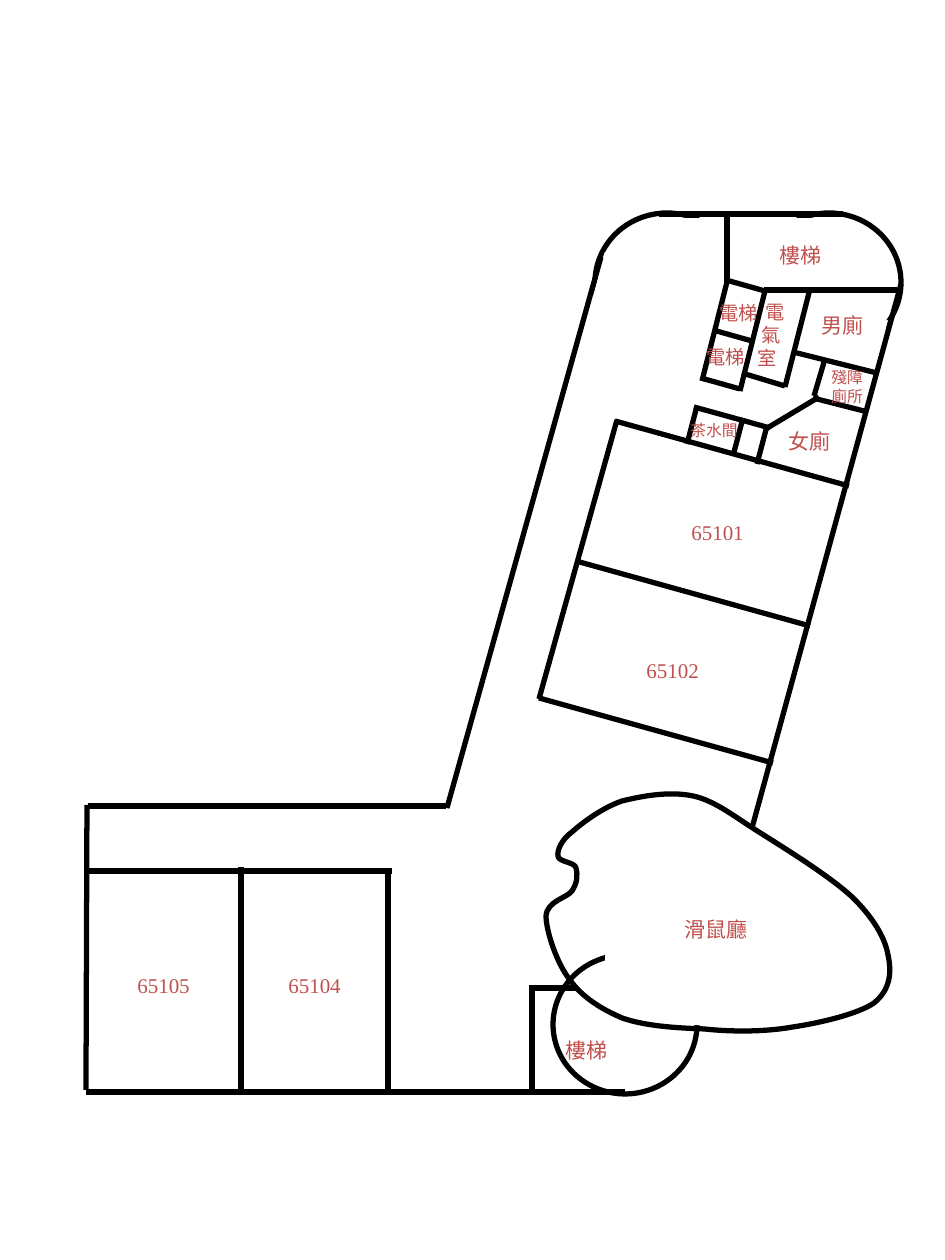
from pptx import Presentation
from pptx.dml.color import RGBColor
from pptx.enum.shapes import MSO_CONNECTOR, MSO_SHAPE
from pptx.enum.text import MSO_AUTO_SIZE
from pptx.oxml.ns import qn
from pptx.oxml.xmlchemy import OxmlElement
from pptx.util import Emu, Pt

SCALE = 914400 / 126
BLACK = RGBColor(0x00, 0x00, 0x00)
WHITE = RGBColor(0xFF, 0xFF, 0xFF)
RED = RGBColor(0xC0, 0x50, 0x4D)
CJK, LATIN = "Noto Sans CJK SC", "Times New Roman"

# Round corners, and the white patches hiding the unwanted arcs: (left, top)
CORNER_SIZE = (144, 139)
CORNERS = [(553, 955), (595, 213), (757, 213)]
# left, top, width, height, rotation
PATCHES = [(604, 936, 117, 87, 3.3), (655, 218, 169, 155, 0),
           (582, 271, 169, 155, 15), (702, 296, 169, 155, 15)]

# x1, y1, x2, y2
OUTER_WALLS = [
    (88, 806, 446, 806), (659, 214, 843, 214), (86, 1092, 625, 1092),
    (87, 805, 86, 1090), (601, 257, 447, 808), (901, 284, 752, 828),
]
INNER_WALLS = [
    (241, 867, 241, 1090), (388, 869, 388, 1094), (89, 871, 392, 871),
    (532, 985, 532, 1094), (532, 988, 576, 988), (617, 420, 539, 699),
    (694, 407, 770, 428), (764, 290, 897, 290), (765, 291, 740, 391),
    (727, 282, 702, 381), (810, 289, 785, 387), (742, 373, 785, 386),
    (793, 352, 877, 373), (825, 359, 814, 396), (764, 430, 819, 397),
    (813, 398, 864, 411), (727, 213, 727, 282),
]
# Equal parallel walls: (dx, dy) and the starting points
PARALLEL_WALLS = [
    ((234, 65), [(539, 698), (576, 561), (615, 421)]),  # classrooms
    ((-10, 38), [(697, 406), (743, 418), (767, 426)]),  # pantry
    ((39, 11), [(701, 378), (713, 330), (726, 280)]),   # lifts
]

# Mouse hall outline: start point, then two control points and an end point per curve
HALL_START = (572, 891)
HALL_CURVES = [
    ((567, 898), (547, 901), (546, 916)), ((546, 931), (557, 964), (570, 980)),
    ((582, 997), (601, 1009), (622, 1018)), ((645, 1026), (675, 1028), (704, 1029)),
    ((732, 1032), (765, 1032), (793, 1027)), ((820, 1023), (858, 1014), (874, 1003)),
    ((890, 990), (892, 973), (888, 955)), ((885, 937), (872, 916), (851, 896)),
    ((829, 876), (789, 851), (762, 834)), ((736, 818), (716, 801), (693, 796)),
    ((669, 791), (643, 796), (622, 801)), ((602, 808), (582, 823), (572, 832)),
    ((561, 840), (557, 851), (558, 856)), ((558, 862), (575, 862), (576, 868)),
    ((578, 876), (577, 883), (572, 891)),
]

# lines, (left, top, width, height), format
LABELS = [
    (["電梯"], (707, 295, 64, 37), {"size": 11}),
    (["電梯"], (694, 339, 64, 37), {"size": 11}),
    (["樓梯"], (767, 236, 68, 38), {}),
    (["男廁"], (809, 306, 68, 38), {}),
    (["女廁"], (776, 422, 68, 38), {}),
    (["茶水間"], (678, 415, 73, 31), {"size": 9}),
    (["殘障", "廁所"], (819, 362, 57, 50), {"size": 9}),
    (["電", "氣", "室"], (745, 294, 64, 83), {"size": 11, "indents": (8, 4, 0)}),
    (["樓梯"], (553, 1031, 68, 38), {}),
    (["滑鼠廳"], (672, 910, 89, 38), {}),
    (["65105"], (125, 966, 78, 38), {"font": LATIN}),
    (["65104"], (276, 966, 78, 38), {"font": LATIN}),
    (["65101"], (679, 513, 78, 38), {"font": LATIN}),
    (["65102"], (634, 651, 78, 38), {"font": LATIN}),
]


def px(value):
    return Emu(round(value * SCALE))


def outline(shape):
    shape.shadow.inherit = False
    shape.fill.background()
    shape.line.color.rgb = BLACK
    shape.line.width = Pt(3)


def add_wall(page, ends):
    wall = page.shapes.add_connector(MSO_CONNECTOR.STRAIGHT, *map(px, ends))
    wall.line.color.rgb = BLACK
    wall.line.width = Pt(3)
    wall.element.spPr.append(OxmlElement("a:effectLst"))


def add_hall(page):
    """Draw the hall as a freeform and turn each three segments into one Bézier curve."""
    builder = page.shapes.build_freeform(*HALL_START, scale=SCALE)
    builder.add_line_segments([point for curve in HALL_CURVES for point in curve])
    hall = builder.convert_to_shape()
    outline(hall)
    segments = list(hall.element.iter(qn("a:lnTo")))
    for first in range(0, 3 * len(HALL_CURVES), 3):
        curve = OxmlElement("a:cubicBezTo")
        segments[first].addprevious(curve)
        for segment in segments[first:first + 3]:
            curve.append(segment[0])
            segment.getparent().remove(segment)


def add_label(page, lines, place, size=12, font=CJK, indents=None):
    box = page.shapes.add_textbox(*map(px, place))
    frame = box.text_frame
    frame.word_wrap = False
    frame.auto_size = MSO_AUTO_SIZE.SHAPE_TO_FIT_TEXT
    for index, line in enumerate(lines):
        para = frame.add_paragraph() if index else frame.paragraphs[0]
        if indents:
            para._p.get_or_add_pPr().set("marL", str(px(indents[index])))
        span = para.add_run()
        span.text = line
        span.font.size = Pt(size)
        span.font.color.rgb = RED
        span.font.name = font
        if font == CJK:
            para.line_spacing = Pt(size * 1.2)
            east_asian = OxmlElement("a:ea")
            east_asian.set("typeface", font)
            span.font._element.append(east_asian)


def main():
    deck = Presentation()
    deck.slide_width, deck.slide_height = px(945), px(1260)
    page = deck.slides.add_slide(deck.slide_layouts[6])

    for corner in CORNERS:
        outline(page.shapes.add_shape(MSO_SHAPE.OVAL, *map(px, corner + CORNER_SIZE)))
    for *place, rotation in PATCHES:
        patch = page.shapes.add_shape(MSO_SHAPE.RECTANGLE, *map(px, place))
        patch.rotation = rotation
        patch.shadow.inherit = False
        patch.fill.solid()
        patch.fill.fore_color.rgb = WHITE
        patch.line.fill.background()

    for ends in OUTER_WALLS + INNER_WALLS:
        add_wall(page, ends)
    for (dx, dy), starts in PARALLEL_WALLS:
        for x, y in starts:
            add_wall(page, (x, y, x + dx, y + dy))

    add_hall(page)
    for lines, place, style in LABELS:
        add_label(page, lines, place, **style)
    deck.save("out.pptx")


if __name__ == "__main__":
    main()
